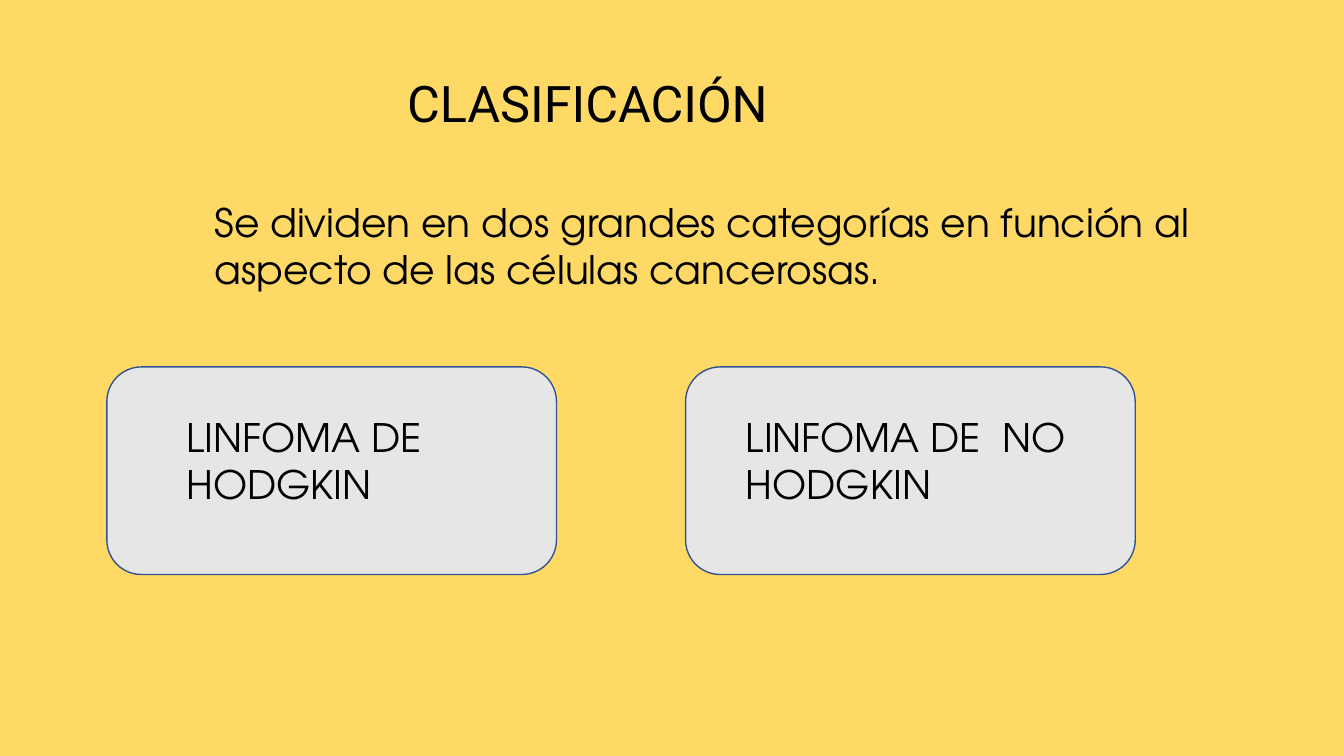
from pptx import Presentation
from pptx.dml.color import RGBColor
from pptx.enum.shapes import MSO_SHAPE
from pptx.enum.text import MSO_AUTO_SIZE, PP_ALIGN
from pptx.util import Inches, Pt

YELLOW = RGBColor(0xFF, 0xD9, 0x66)
GREY = RGBColor(0xE7, 0xE6, 0xE6)
BLUE = RGBColor(0x32, 0x54, 0x91)
BLACK = RGBColor(0, 0, 0)

TITLE_FONT = "Roboto"
BODY_FONT = "TeX Gyre Adventor"

# Card grid, in inches
CARD_LEFT, CARD_TOP = 1.06, 3.64
CARD_WIDTH, CARD_HEIGHT = 4.46, 2.06
CARD_STEP = 5.74
LABEL_TOP, LABEL_HEIGHT = 4.05, 1.04

# Label text, inset from the card's left edge, label width
CARDS = [
    ("LINFOMA DE HODGKIN", 0.69, 3.23),
    ("LINFOMA DE  NO HODGKIN", 0.5, 3.49),
]


def add_text(slide, text, box, size=28, font=BODY_FONT, align=PP_ALIGN.LEFT):
    tf = slide.shapes.add_textbox(*map(Inches, box)).text_frame
    tf.word_wrap = True
    tf.auto_size = MSO_AUTO_SIZE.SHAPE_TO_FIT_TEXT
    p = tf.paragraphs[0]
    p.text = text
    p.alignment = align
    p.font.size = Pt(size)
    p.font.name = font
    p.font.color.rgb = BLACK


def add_card(slide, left):
    box = (left, CARD_TOP, CARD_WIDTH, CARD_HEIGHT)
    sp = slide.shapes.add_shape(MSO_SHAPE.ROUNDED_RECTANGLE, *map(Inches, box))
    sp.shadow.inherit = False
    sp.fill.solid()
    sp.fill.fore_color.rgb = GREY
    sp.line.color.rgb = BLUE
    sp.line.width = Pt(1)


def main():
    prs = Presentation()
    prs.slide_width, prs.slide_height = Inches(13.33), Inches(7.5)
    slide = prs.slides.add_slide(prs.slide_layouts[6])
    slide.background.fill.solid()
    slide.background.fill.fore_color.rgb = YELLOW

    # Title and introduction
    add_text(slide, "CLASIFICACIÓN ", (1.43, 0.67, 8.92, 0.71),
             36, TITLE_FONT, PP_ALIGN.CENTER)
    add_text(slide, "Se dividen en dos grandes categorías en función al "
             "aspecto de las células cancerosas.", (2.03, 1.92, 10.02, 1.65))

    # Two categories
    for i, (label, inset, width) in enumerate(CARDS):
        left = CARD_LEFT + i * CARD_STEP
        add_card(slide, left)
        add_text(slide, label, (left + inset, LABEL_TOP, width, LABEL_HEIGHT))

    prs.save("out.pptx")


if __name__ == "__main__":
    main()
